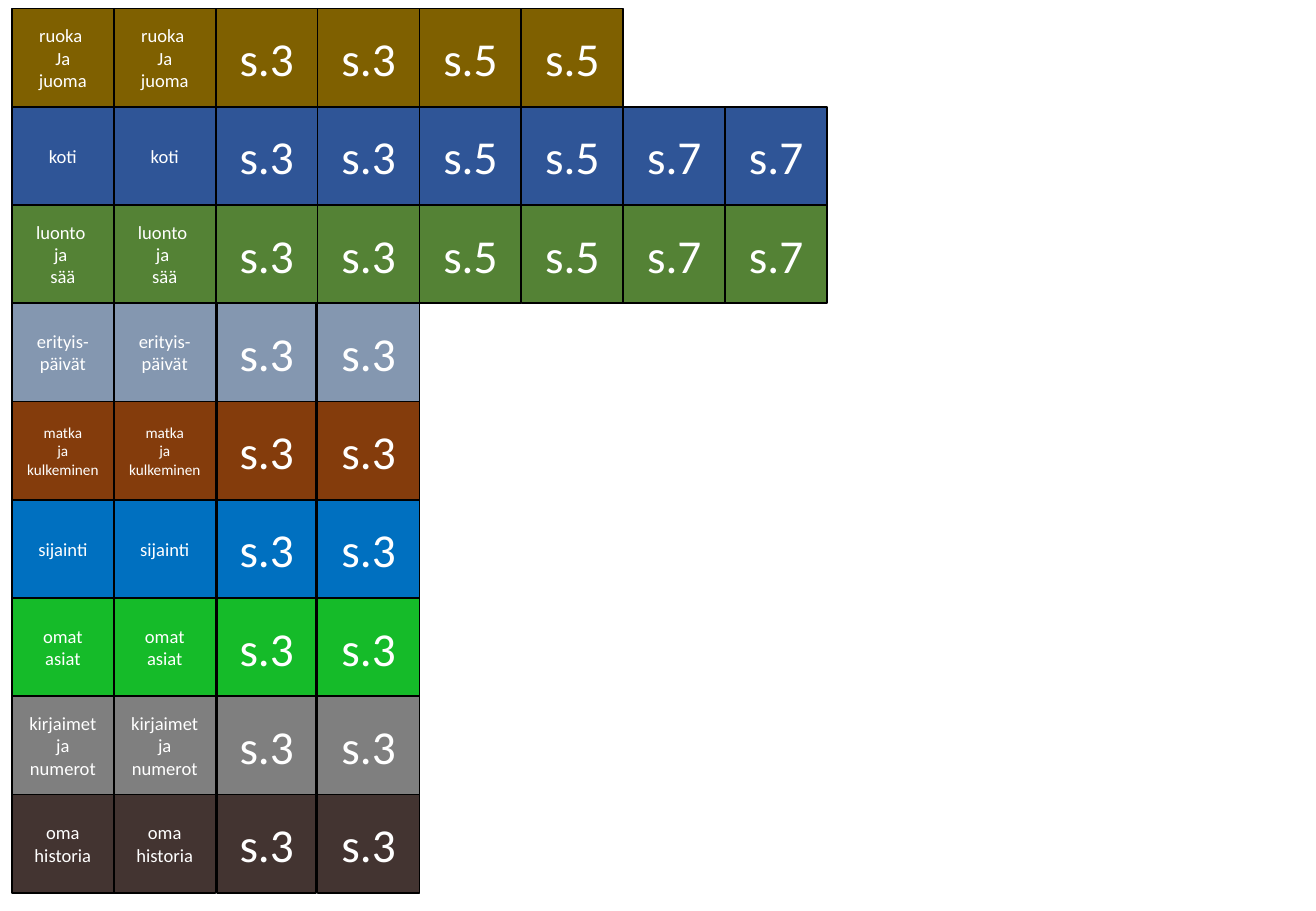
"""Build a slide with a colour-coded grid of topic labels and page numbers."""
from pptx import Presentation
from pptx.dml.color import RGBColor
from pptx.enum.shapes import MSO_SHAPE
from pptx.enum.text import MSO_ANCHOR, PP_ALIGN
from pptx.util import Cm, Pt

RECTANGLE = MSO_SHAPE.RECTANGLE
MIDDLE = MSO_ANCHOR.MIDDLE
CENTER = PP_ALIGN.CENTER

COLORS = {
    "food": "7F6000",
    "home": "2F5597",
    "nature": "548235",
    "holidays": "8497B0",
    "travel": "843C0C",
    "location": "0070C0",
    "belongings": "15BB29",
    "letters": "7F7F7F",
    "history": "433431",
    "line": "000000",
    "text": "FFFFFF",
}
TOPICS = [
    ("food", ["ruoka ", "Ja", "juoma"], 11, ["s.3", "s.5"]),
    ("home", ["koti"], 11, ["s.3", "s.5", "s.7"]),
    ("nature", ["luonto ", "ja ", "sää"], 11, ["s.3", "s.5", "s.7"]),
    ("holidays", ["erityis-päivät"], 11, ["s.3"]),
    ("travel", ["matka", "ja", "kulkeminen"], 9, ["s.3"]),
    ("location", ["sijainti"], 11, ["s.3"]),
    ("belongings", ["omat", "asiat"], 11, ["s.3"]),
    ("letters", ["kirjaimet", "ja", "numerot"], 11, ["s.3"]),
    ("history", ["oma", "historia"], 11, ["s.3"]),
]
FONT = "Calibri"
PAGE_SIZE = 28
COPIES = 2
GRID_LEFT, GRID_TOP, GRID_HEIGHT = 0.25, 0.18, 18.49
CELL_WIDTH = 2.13
CELL_HEIGHT = GRID_HEIGHT / len(TOPICS)
NARROW_COLUMN, NARROW_INSET = 2, 0.03


def color(name):
    return RGBColor.from_string(COLORS[name])


def add_cell(page, row, column, topic, lines, size, inset):
    box = page.shapes.add_shape(
        RECTANGLE,
        Cm(GRID_LEFT + column * CELL_WIDTH + inset),
        Cm(GRID_TOP + row * CELL_HEIGHT),
        Cm(CELL_WIDTH - 2 * inset),
        Cm(CELL_HEIGHT),
    )
    box.shadow.inherit = False
    box.fill.solid()
    box.fill.fore_color.rgb = color(topic)
    box.line.color.rgb = color("line")
    box.line.width = Pt(1)
    frame = box.text_frame
    frame.word_wrap = True
    frame.vertical_anchor = MIDDLE
    for index, line in enumerate(lines):
        para = frame.add_paragraph() if index else frame.paragraphs[0]
        para.add_run().text = line
        para.alignment = CENTER
        para.font.name = FONT
        para.font.size = Pt(size)
        para.font.color.rgb = color("text")


def main():
    deck = Presentation()
    deck.slide_width, deck.slide_height = Cm(27.51), Cm(19.05)
    page = deck.slides.add_slide(deck.slide_layouts[6])
    for row, (topic, label, label_size, numbers) in enumerate(TOPICS):
        groups = [(label, label_size)] + [([number], PAGE_SIZE) for number in numbers]
        for column in range(COPIES * len(groups)):
            lines, size = groups[column // COPIES]
            narrow = len(numbers) == 1 and column == NARROW_COLUMN
            inset = NARROW_INSET if narrow else 0
            add_cell(page, row, column, topic, lines, size, inset)
    deck.save("out.pptx")


if __name__ == "__main__":
    main()
